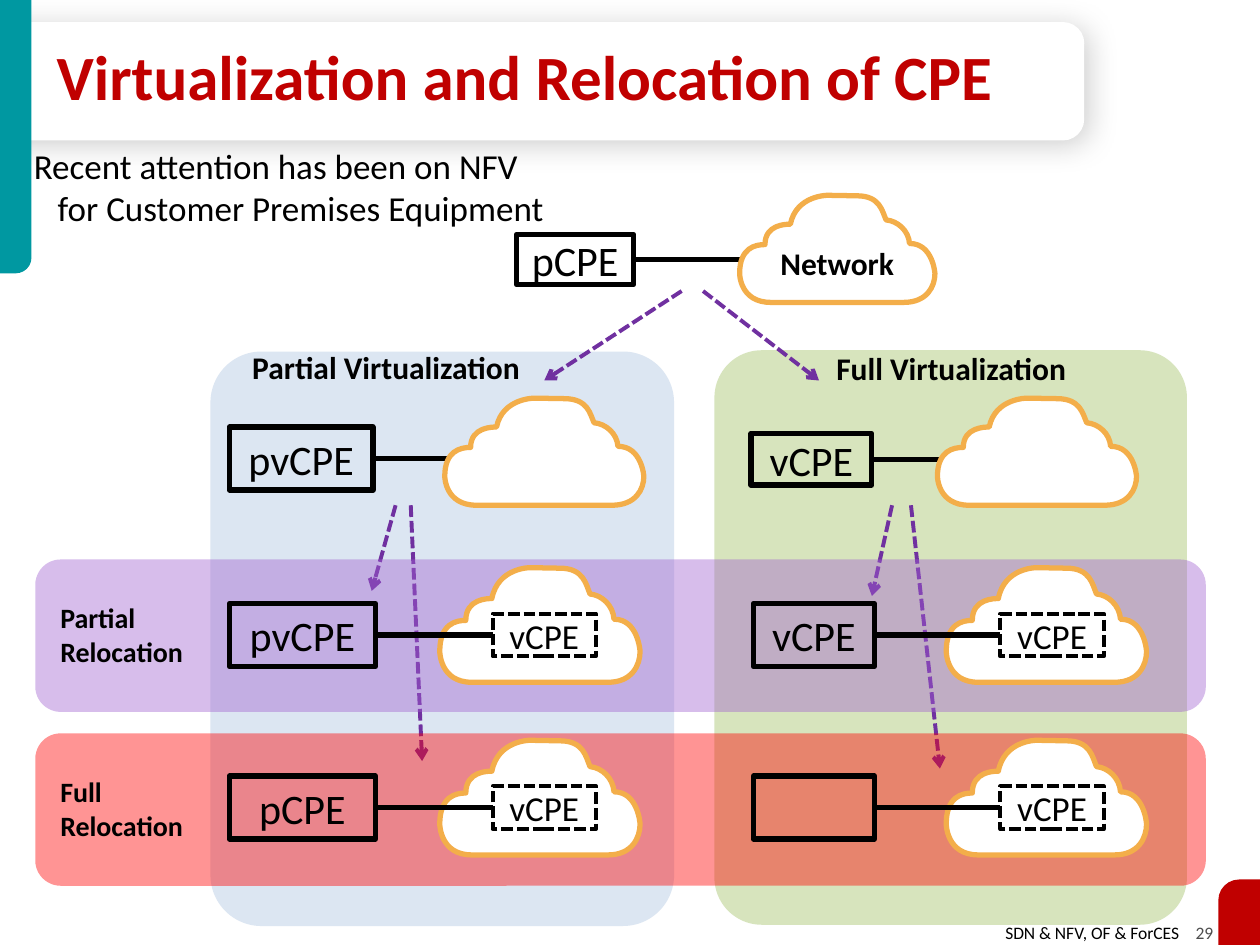
from lxml.etree import SubElement as Sub
from pptx import Presentation as Deck
from pptx.dml.color import RGBColor as Rgb
from pptx.enum.dml import MSO_LINE as Dash
from pptx.enum.shapes import MSO_CONNECTOR as Wire, MSO_SHAPE as Kind
from pptx.enum.text import MSO_ANCHOR as Anchor, PP_ALIGN as Align
from pptx.oxml.ns import qn
from pptx.util import Emu, Inches, Pt

WIDE, HIGH = Inches(10), Inches(7.5)
COLS = 100
UNIT = WIDE / COLS
FONT = "Calibri"
HUE = {
    "ink": "000000", "gray": "4D4D4D", "white": "FFFFFF", "teal": "0098A1",
    "red": "C00000", "green": "D7E4BD", "blue": "DCE6F2", "rose": "FF0000",
    "lilac": "A162D0", "purple": "7030A0", "gold": "F3AE4A",
}
PUFF = [
    ("moveTo", (84, 100)),
    ("cubicBezTo", (96, 100), (100, 85), (100, 73)),
    ("cubicBezTo", (100, 73), (99, 45), (87, 45)),
    ("cubicBezTo", (86.5, 33), (81, 24), (75, 23)),
    ("cubicBezTo", (73, 15), (72, 0.5), (60, 0.5)),
    ("lnTo", (45, 0)),
    ("cubicBezTo", (45, 0), (29, 0), (26, 27)),
    ("cubicBezTo", (24, 27), (13, 27), (13, 46)),
    ("cubicBezTo", (8, 46), (0, 49), (0, 73)),
    ("lnTo", (0, 73)),
    ("cubicBezTo", (0, 73), (0, 100), (16, 100)),
    ("lnTo", (84, 100)),
    ("close",),
]


def grid(*cells):
    return [Emu(round(cell * UNIT)) for cell in cells]


def tint(name):
    return Rgb.from_string(HUE[name])


def paint(shape, fill=None, line=None, width=3, dash=False):
    shape.shadow.inherit = False
    if fill:
        shape.fill.solid()
        shape.fill.fore_color.rgb = tint(fill)
    else:
        shape.fill.background()
    if line:
        stroke(shape.line, line, width, dash)
    else:
        shape.line.fill.background()


def stroke(line, name, width, dash):
    line.color.rgb = tint(name)
    line.width = Pt(width)
    if dash:
        line.dash_style = Dash.SQUARE_DOT


def write(para, text, size, bold=False, hue="ink"):
    run = para.add_run()
    run.text = text
    run.font.name, run.font.size, run.font.bold = FONT, Pt(size), bold
    run.font.color.rgb = tint(hue)


def block(slide, area, kind, fill, adjust=(), flip=None, alpha=None):
    shape = slide.shapes.add_shape(kind, *grid(*area))
    paint(shape, fill)
    for spot, value in enumerate(adjust):
        shape.adjustments[spot] = value
    if flip:
        shape._element.spPr.find(qn("a:xfrm")).set(flip, "1")
    if alpha:
        color = shape._element.spPr.find(".//" + qn("a:srgbClr"))
        Sub(color, qn("a:alpha"), val=str(alpha * 1000))
    return shape


def node(slide, area, text, size=24, dash=False):
    shape = slide.shapes.add_shape(Kind.RECTANGLE, *grid(*area))
    paint(shape, None, "ink", 2.25 if dash else 3, dash)
    if text:
        frame = shape.text_frame
        frame.margin_left = frame.margin_right = 0
        frame.margin_top = frame.margin_bottom = 0
        frame.vertical_anchor = Anchor.MIDDLE
        frame.paragraphs[0].alignment = Align.CENTER
        write(frame.paragraphs[0], text, size)
    return shape


def label(slide, area, text, size, bold=True, align=Align.LEFT):
    frame = slide.shapes.add_textbox(*grid(*area)).text_frame
    frame.word_wrap = True
    frame.paragraphs[0].alignment = align
    write(frame.paragraphs[0], text, size, bold)
    return frame


def wire(slide, ends, hue="ink", width=3, dash=False):
    link = slide.shapes.add_connector(Wire.STRAIGHT, *grid(*ends))
    stroke(link.line, hue, width, dash)
    Sub(link._element.spPr, qn("a:effectLst"))
    return link


def arrow(slide, ends):
    link = wire(slide, ends, "purple", 2.25, True)
    Sub(link.line._get_or_add_ln(), qn("a:tailEnd"), type="arrow")


def cloud(slide, area):
    left, top, wide, high = grid(*area)
    form = slide.shapes.build_freeform(left, top)
    form.add_line_segments([(left + wide, top), (left + wide, top + high)])
    shape = form.convert_to_shape()
    paint(shape, "white", "gold")
    trace = shape._element.spPr.find(".//" + qn("a:path"))
    for old in list(trace):
        trace.remove(old)
    trace.set("w", "1000")
    trace.set("h", "1000")
    for verb, *dots in PUFF:
        move = Sub(trace, qn("a:" + verb))
        for x, y in dots:
            Sub(move, qn("a:pt"), x=str(int(x * 10)), y=str(int(y * 10)))


def stub(slide, area, text, reach):
    shape = node(slide, area, text)
    left, top, wide, high = area
    mid = top + high / 2
    wire(slide, (left + wide, mid, reach, mid)).begin_connect(shape, 3)


def site(slide, left, top, wide, text, inner, sky):
    cloud(slide, (sky, top - 2.85, 15.9, 9.1))
    outer = node(slide, (left, top, wide, 5), text)
    core = node(slide, (inner, top + 0.8, 8.2, 3.4), "vCPE", 20, True)
    mid = top + 2.5
    link = wire(slide, (left + wide, mid, inner, mid))
    link.begin_connect(outer, 3)
    link.end_connect(core, 1)


def foot(slide):
    frame = slide.shapes.add_textbox(*grid(78.8, 72.7, 18.9, 2.7)).text_frame
    para = frame.paragraphs[0]
    write(para, "SDN & NFV, OF & ForCES\t", 10)
    write(para, "29", 10, hue="gray")
    stops = Sub(para._p.get_or_add_pPr(), qn("a:tabLst"))
    Sub(stops, qn("a:tab"), pos=str(grid(15.1)[0]), algn="l")


def head(slide):
    card = block(slide, (38.3, -36.6, 9.4, 86.1),
                 Kind.ROUND_2_SAME_RECTANGLE, "white", (0.18, 0))
    card.rotation = 90
    glow = Sub(card._element.spPr.find(qn("a:effectLst")), qn("a:outerShdw"),
               blurRad=str(Pt(17)), dist=str(Pt(3)), dir=str(45 * 60000),
               algn="ctr", rotWithShape="0")
    shade = Sub(glow, qn("a:srgbClr"), val=HUE["ink"])
    Sub(shade, qn("a:alpha"), val="19000")
    one = Kind.ROUND_1_RECTANGLE
    block(slide, (0, 0, 2.5, 21.7), one, "teal", (0.5,), "flipV")
    block(slide, (96.7, 69.8, 3.3, 5.2), one, "red", (0.5,), "flipH")
    title = slide.shapes.title
    slide.shapes._spTree.append(title._element)
    title.left, title.top, title.width, title.height = grid(3.5, 2.9, 78.7, 7.1)
    title.text_frame.vertical_anchor = Anchor.MIDDLE
    para = title.text_frame.paragraphs[0]
    para.alignment, para.line_spacing = Align.LEFT, 0.85
    write(para, "Virtualization and Relocation of CPE", 36, True, "red")


def intro(slide):
    frame = label(slide, (1.7, 11, 58.7, 8.6),
                  "Recent attention has been on NFV", 20, False)
    frame.paragraphs[0].space_before = Pt(4)
    para = frame.add_paragraph()
    write(para, "for Customer Premises Equipment", 20)
    para._p.get_or_add_pPr().set("marL", str(grid(1.9)[0]))


def main():
    deck = Deck()
    deck.slide_width, deck.slide_height = WIDE, HIGH
    slide = deck.slides.add_slide(deck.slide_layouts[5])
    foot(slide)
    head(slide)
    block(slide, (56.7, 27.8, 37.5, 45.6), Kind.ROUNDED_RECTANGLE, "green", (0.1,))
    block(slide, (16.7, 27.9, 36.8, 45.6), Kind.ROUNDED_RECTANGLE, "blue", (0.11,))
    for area, text, reach in [
        ((41, 18.6, 9.3, 4), "pCPE", 62.4),
        ((59.6, 34.4, 9.6, 4.1), "vCPE", 81.2),
        ((18.2, 33.9, 11.4, 5), "pvCPE", 41.4),
    ]:
        stub(slide, area, text, reach)
    for ends in [
        (54.1, 23.1, 43.2, 30.2), (55.8, 23.1, 65, 30.2),
        (31.4, 40.1, 29.5, 46.9), (32.6, 40.1, 33.5, 60.4),
        (70.8, 40.1, 69.2, 47.3), (72.3, 40.1, 74.6, 61),
    ]:
        arrow(slide, ends)
    label(slide, (18.5, 27.1, 24.3, 4), "Partial Virtualization", 18, align=Align.CENTER)
    label(slide, (64.1, 27.2, 22.8, 4), "Full Virtualization", 18, align=Align.CENTER)
    for top, hue, text in [(58.2, "rose", "Full Relocation"),
                           (44.4, "lilac", "Partial Relocation")]:
        block(slide, (2.8, top, 92.9, 12.1), Kind.ROUNDED_RECTANGLE, hue, alpha=42)
        label(slide, (3.8, top + 2.8, 15.1, 6.4), text, 16)
    cloud(slide, (58.7, 15.5, 15.5, 8.5))
    name = label(slide, (59.6, 18.6, 13.7, 3.9), "Network", 18, align=Align.CENTER)
    name.paragraphs[0].line_spacing = 1.1
    for left in (35.3, 74.4):
        cloud(slide, (left, 31.6, 15.8, 8.5))
    for top, names in [(47.9, ("pvCPE", "vCPE")), (61.6, ("pCPE", ""))]:
        site(slide, 18.2, top, 11.6, names[0], 39.1, 34.9)
        site(slide, 59.8, top, 9.6, names[1], 79.4, 75.1)
    intro(slide)
    deck.save("out.pptx")


if __name__ == "__main__":
    main()
